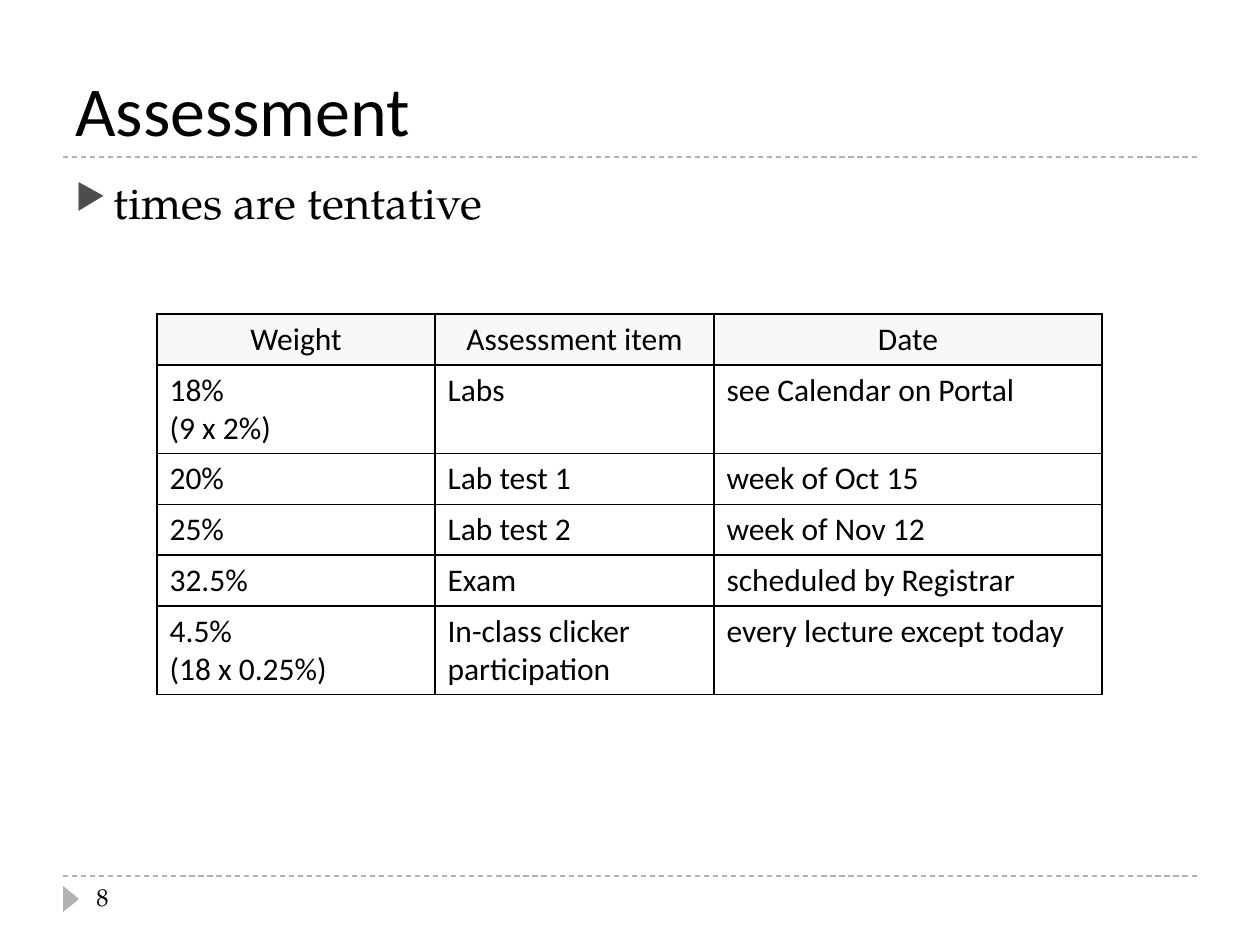
from lxml import etree
from pptx import Presentation
from pptx import util as u
from pptx.dml.color import RGBColor
from pptx.enum import dml, shapes, text
from pptx.oxml import ns

SANS, SERIF = "Calibri", "TeX Gyre Pagella"
BLACK, GREY = "000000", "B2B2B2"


def px(n):
    return u.Emu(round(n * 914400 / 126))


def rgb(value):
    return RGBColor.from_string(value)


def sub(parent, tag, **attrs):
    return etree.SubElement(parent, ns.qn(tag), {k: str(v) for k, v in attrs.items()})


class Deck:
    """Holds the style and the current slide, with a method for each kind of element."""

    def __init__(self, width, height):
        self.prs = Presentation()
        self.prs.slide_width, self.prs.slide_height = px(width), px(height)
        self.s = self.prs.slides.add_slide(self.prs.slide_layouts[6])

    def style(self, tf, size, font, align=text.PP_ALIGN.LEFT):
        for p in tf.paragraphs:
            p.alignment = align
            for r in p.runs:
                r.font.size, r.font.name = u.Pt(size), font
                r.font.color.rgb = rgb(BLACK)

    def rule(self, x, y, width):
        c = self.s.shapes.add_connector(
            shapes.MSO_CONNECTOR.STRAIGHT, px(x), px(y), px(x + width), px(y))
        c.line.color.rgb, c.line.width = rgb(GREY), u.Pt(0.75)
        c.line.dash_style = dml.MSO_LINE.DASH
        sub(c._element.spPr, "a:effectLst")

    def triangle(self, x, y, w, h, rotation):
        sp = self.s.shapes.add_shape(
            shapes.MSO_SHAPE.ISOSCELES_TRIANGLE, px(x), px(y), px(w), px(h))
        sp.rotation = rotation
        sp.shadow.inherit = False
        sp.fill.solid()
        sp.fill.fore_color.rgb = rgb(GREY)
        sp.line.fill.background()

    def text(self, x, y, w, h, words, size, font, anchor=text.MSO_ANCHOR.TOP):
        tf = self.s.shapes.add_textbox(px(x), px(y), px(w), px(h)).text_frame
        tf.word_wrap, tf.vertical_anchor = True, anchor
        tf.text = words
        self.style(tf, size, font)
        return tf

    def bullets(self, x, y, w, h, words, size, font):
        tf = self.text(x, y, w, h, words, size, font)
        for p in tf.paragraphs:
            p.space_before = u.Pt(6)
            pPr = p._p.get_or_add_pPr()
            pPr.set("marL", str(px(38)))
            pPr.set("indent", str(-px(38)))
            sub(sub(pPr, "a:buClr"), "a:srgbClr", val="4D4D4D")
            sub(pPr, "a:buSzPct", val=76000)
            sub(pPr, "a:buChar", char="▶")

    def border(self, cell):
        tcPr = cell._tc.get_or_add_tcPr()
        for side in "LRTB":
            ln = sub(tcPr, f"a:ln{side}", w=u.Pt(1))
            sub(sub(ln, "a:solidFill"), "a:srgbClr", val=BLACK)

    def table(self, x, y, widths, row_height, rows, size, font):
        table = self.s.shapes.add_table(
            len(rows), len(widths), px(x), px(y),
            px(sum(widths)), px(row_height * len(rows))).table
        for col, width in zip(table.columns, widths):
            col.width = px(width)
        for i, row in enumerate(rows):
            table.rows[i].height = px(row_height)
            for j, words in enumerate(row):
                cell = table.cell(i, j)
                cell.text_frame.text = words
                align = text.PP_ALIGN.LEFT if i else text.PP_ALIGN.CENTER
                self.style(cell.text_frame, size, font, align)
                self.border(cell)
                cell.fill.solid()
                cell.fill.fore_color.rgb = rgb("FFFFFF" if i else "F8F8F8")


ASSESSMENTS = [
    ("Weight", "Assessment item", "Date"),
    ("18%\v(9 x 2%)", "Labs", "see Calendar on Portal"),
    ("20%", "Lab test 1", "week of Oct 15"),
    ("25%", "Lab test 2", "week of Nov 12"),
    ("32.5%", "Exam", "scheduled by Registrar"),
    ("4.5%\n(18 x 0.25%)", "In-class clicker participation", "every lecture except today"),
]


def main():
    d = Deck(1260, 945)
    for y in (876, 157):
        d.rule(63, y, 1134)
    d.triangle(58, 891, 26, 16, 90)
    d.text(63, 21, 1134, 136, "Assessment", 40, SANS, text.MSO_ANCHOR.BOTTOM)
    d.bullets(63, 168, 1134, 680, "times are tentative", 26, SERIF)
    d.text(84, 876, 273, 50, "8", 14, SERIF)
    d.table(157, 314, (278, 279, 388), 51, ASSESSMENTS, 18, SANS)
    d.prs.save("out.pptx")


if __name__ == "__main__":
    main()
